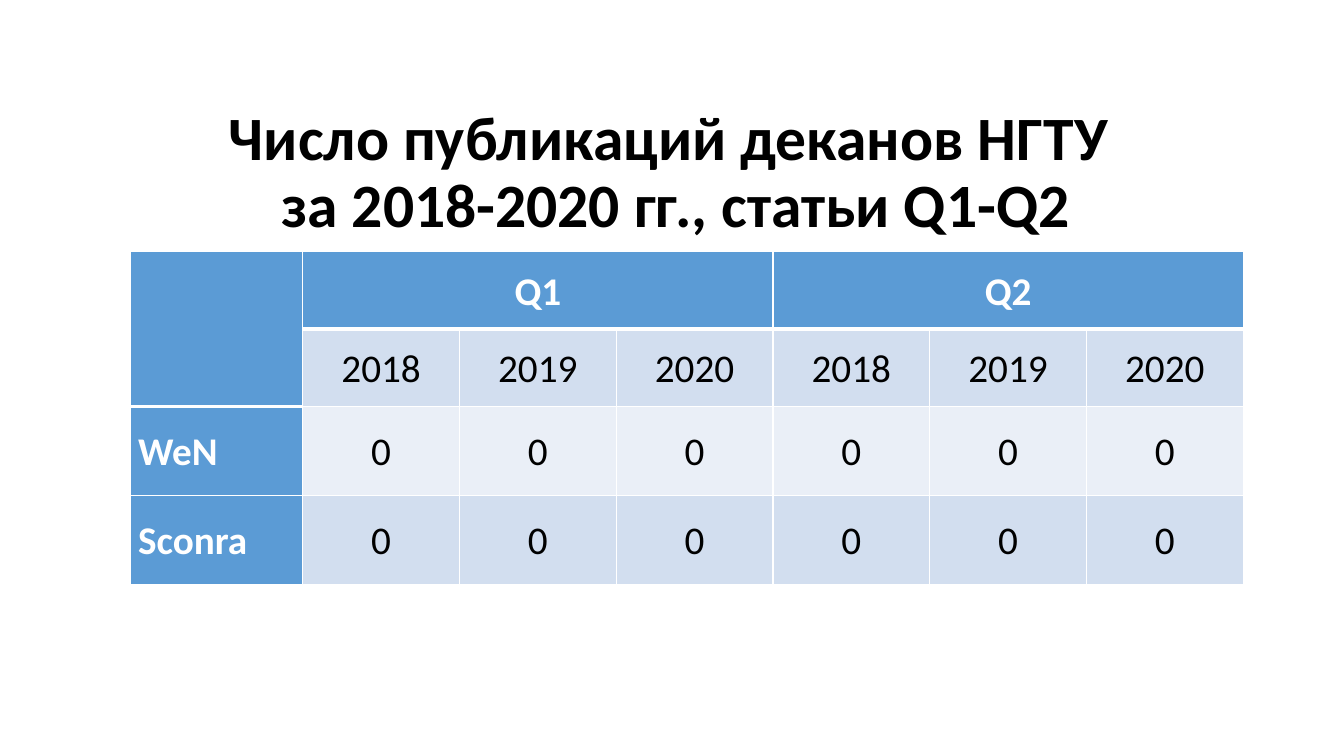
from dataclasses import dataclass

from lxml import etree
from pptx import Presentation
from pptx import util as u
from pptx.dml import color
from pptx.enum import text
from pptx.oxml import ns

BLACK, WHITE, BLUE = "000000", "FFFFFF", "5B9BD5"
BANDS = ("D2DEEF", "EAEFF7")
YEARS = ("2018", "2019", "2020")
QUARTILES = ("Q1", "Q2")
DATABASES = ("WeN", "Sconra")
COLUMN_WIDTHS = [4.34] + [3.95] * len(YEARS) * len(QUARTILES)
ROW_HEIGHTS = [1.95, 1.95, 2.24, 2.24]
TITLE_LINES = ("Число публикаций деканов НГТУ ", "за 2018-2020 гг., статьи Q1-Q2")

TITLE_PLACE = {"left": u.Cm(3.07), "top": u.Cm(2.36), "width": u.Cm(27.94), "height": u.Cm(4.04)}
TITLE_FRAME = {
    "word_wrap": True,
    "auto_size": text.MSO_AUTO_SIZE.NONE,
    "vertical_anchor": text.MSO_ANCHOR.MIDDLE,
}
CELL_FRAME = {
    "vertical_anchor": text.MSO_ANCHOR.MIDDLE,
    "margin_left": u.Cm(0.19),
    "margin_right": u.Cm(0.19),
    "margin_top": 0,
    "margin_bottom": 0,
}


@dataclass(frozen=True)
class TextLook:
    size: int
    ink: str
    bold: bool
    align: text.PP_ALIGN
    spacing: float


@dataclass(frozen=True)
class Entry:
    row: int
    column: int
    wording: str
    fill: str
    look: TextLook


CENTER = text.PP_ALIGN.CENTER
TITLE_LOOK = TextLook(44, BLACK, True, CENTER, 0.9)
HEADER_LOOK = TextLook(28, WHITE, True, CENTER, 1.07)
DATABASE_LOOK = TextLook(28, WHITE, True, text.PP_ALIGN.LEFT, 1.07)
VALUE_LOOK = TextLook(28, BLACK, False, CENTER, 1.07)


def rgb(code: str) -> color.RGBColor:
    return color.RGBColor.from_string(code)


def apply(target, values: dict) -> None:
    for attribute, value in values.items():
        setattr(target, attribute, value)


def write(paragraph, wording: str, look: TextLook) -> None:
    paragraph.text = wording
    apply(paragraph, {"alignment": look.align, "line_spacing": look.spacing,
                      "space_before": u.Pt(0), "space_after": u.Pt(0)})
    for run in paragraph.runs:
        apply(run.font, {"name": "Calibri", "size": u.Pt(look.size), "bold": look.bold})
        run.font.color.rgb = rgb(look.ink)


def ends_header(row: int, column: int) -> bool:
    return row == 0 or (row, column) == (1, 0)


def draw_borders(cell, row: int, column: int) -> None:
    widths = {
        "lnL": 1,
        "lnR": 1,
        "lnT": 3 if row > 0 and ends_header(row - 1, column) else 1,
        "lnB": 3 if ends_header(row, column) else 1,
    }
    properties = cell._tc.get_or_add_tcPr()
    for side, width in widths.items():
        line = etree.SubElement(properties, ns.qn(f"a:{side}"), w=str(u.Pt(width)))
        fill = etree.SubElement(line, ns.qn("a:solidFill"))
        etree.SubElement(fill, ns.qn("a:srgbClr"), val=WHITE)


def table_entries() -> list[Entry]:
    entries = [Entry(row, 0, "", BLUE, HEADER_LOOK) for row in (0, 1)]
    for column in range(1, len(COLUMN_WIDTHS)):
        quartile, year = divmod(column - 1, len(YEARS))
        heading = QUARTILES[quartile] if year == 0 else ""
        entries.append(Entry(0, column, heading, BLUE, HEADER_LOOK))
        entries.append(Entry(1, column, YEARS[year], BANDS[0], VALUE_LOOK))
    for row, database in enumerate(DATABASES, start=2):
        entries.append(Entry(row, 0, database, BLUE, DATABASE_LOOK))
        entries += [Entry(row, column, "0", BANDS[(row - 1) % 2], VALUE_LOOK)
                    for column in range(1, len(COLUMN_WIDTHS))]
    return entries


def add_title(slide) -> None:
    title = slide.shapes.title
    apply(title, TITLE_PLACE)
    frame = title.text_frame
    apply(frame, TITLE_FRAME)
    for index, wording in enumerate(TITLE_LINES):
        paragraph = frame.add_paragraph() if index else frame.paragraphs[0]
        write(paragraph, wording, TITLE_LOOK)


def add_publications(slide) -> None:
    publications = slide.shapes.add_table(
        len(ROW_HEIGHTS), len(COLUMN_WIDTHS), u.Cm(3.29), u.Cm(6.34),
        u.Cm(sum(COLUMN_WIDTHS)), u.Cm(sum(ROW_HEIGHTS))).table
    publications.horz_banding = False
    for column, width in zip(publications.columns, COLUMN_WIDTHS):
        column.width = u.Cm(width)
    for row, height in zip(publications.rows, ROW_HEIGHTS):
        row.height = u.Cm(height)
    for entry in table_entries():
        cell = publications.cell(entry.row, entry.column)
        apply(cell, CELL_FRAME)
        draw_borders(cell, entry.row, entry.column)
        cell.fill.solid()
        cell.fill.fore_color.rgb = rgb(entry.fill)
        if entry.wording:
            write(cell.text_frame.paragraphs[0], entry.wording, entry.look)
    publications.cell(0, 0).merge(publications.cell(1, 0))
    for first in range(1, len(COLUMN_WIDTHS), len(YEARS)):
        publications.cell(0, first).merge(publications.cell(0, first + len(YEARS) - 1))


def main() -> None:
    deck = Presentation()
    apply(deck, {"slide_width": u.Cm(33.87), "slide_height": u.Cm(19.05)})
    slide = deck.slides.add_slide(deck.slide_layouts[5])
    slide.background.fill.solid()
    slide.background.fill.fore_color.rgb = rgb(WHITE)
    add_title(slide)
    add_publications(slide)
    deck.save("out.pptx")


if __name__ == "__main__":
    main()
